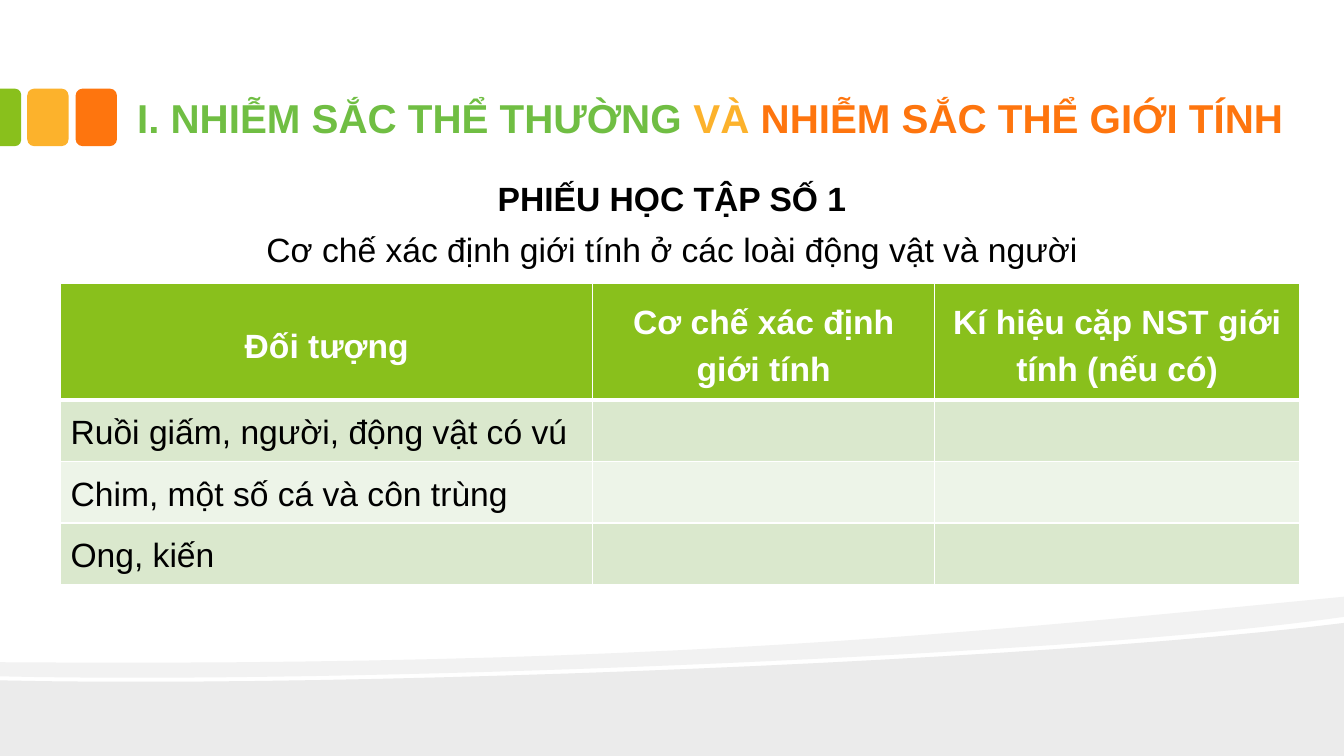
from dataclasses import dataclass

from lxml.etree import SubElement
from pptx import Presentation
from pptx.dml.color import RGBColor
from pptx.enum.shapes import MSO_SHAPE as Preset
from pptx.enum.text import MSO_ANCHOR as Anchor, PP_ALIGN as Align
from pptx.oxml.ns import qn
from pptx.util import Inches, Pt

WHITE = RGBColor(0xFF, 0xFF, 0xFF)
BLACK = RGBColor(0, 0, 0)
GREEN = RGBColor(0x89, 0xC0, 0x1C)
TITLE_GREEN = RGBColor(0x70, 0xBE, 0x43)
YELLOW = RGBColor(0xFC, 0xB2, 0x2C)
ORANGE = RGBColor(0xFE, 0x75, 0x0E)
BAND_DARK = RGBColor(0xDA, 0xE8, 0xCD)
BAND_LIGHT = RGBColor(0xED, 0xF4, 0xE8)
WAVE_GREY = RGBColor(0xEB, 0xEB, 0xEB)
WAVE_PALE = RGBColor(0xF2, 0xF2, 0xF2)
FONT = "Arial"
CURVE_STEPS = 24

Point = tuple[float, float]


@dataclass
class Wave:
    """Outline in inches: a lone point is a corner, four points are a Bezier curve."""
    color: RGBColor
    outline: list[list[Point]]


@dataclass
class Tab:
    preset: Preset
    left: float
    top: float
    width: float
    height: float
    color: RGBColor
    rotation: int = 0


WAVES = [
    Wave(WAVE_GREY, [[(13.33, 6.18)], [(13.33, 7.5)], [(0, 7.5)],
                     [(0, 6.75), (3.52, 6.83), (10.42, 6.55), (13.33, 6.18)]]),
    Wave(WAVE_PALE, [[(13.33, 5.92)],
                     [(13.33, 6.12), (12.55, 6.23), (11.49, 6.33), (10.29, 6.41)],
                     [(10.29, 6.41), (6.98, 6.63), (2.58, 6.77), (0, 6.71)],
                     [(0, 6.57), (6.52, 6.62), (9.71, 6.27), (13.33, 5.92)]]),
]
TABS = [
    Tab(Preset.ROUNDED_RECTANGLE, 0.75, 0.88, 0.41, 0.57, ORANGE),
    Tab(Preset.ROUNDED_RECTANGLE, 0.27, 0.88, 0.41, 0.57, YELLOW),
    Tab(Preset.ROUND_2_SAME_RECTANGLE, -0.18, 1.06, 0.57, 0.21, GREEN, 90),
]
TITLE = [("I. NHIỄM SẮC THỂ THƯỜNG ", TITLE_GREEN), ("VÀ ", YELLOW),
         ("NHIỄM SẮC THỂ GIỚI TÍNH", ORANGE)]
SUBTITLE = [("PHIẾU HỌC TẬP SỐ 1", True),
            ("Cơ chế xác định giới tính ở các loài động vật và người", False)]
COLUMN_WIDTHS = [5.28, 3.39, 3.62]
ROW_HEIGHTS = [1.16, 0.61, 0.61, 0.61]
ROWS = [
    ["Đối tượng", "Cơ chế xác định giới tính", "Kí hiệu cặp NST giới tính (nếu có)"],
    ["Ruồi giấm, người, động vật có vú", "", ""],
    ["Chim, một số cá và côn trùng", "", ""],
    ["Ong, kiến", "", ""],
]


def paint(shape, color: RGBColor) -> None:
    shape.shadow.inherit = False
    shape.fill.solid()
    shape.fill.fore_color.rgb = color
    shape.line.fill.background()


def trace(piece: list[Point]) -> list[Point]:
    if len(piece) == 1:
        return piece
    points = []
    for step in range(CURVE_STEPS + 1):
        t = step / CURVE_STEPS
        weights = ((1 - t) ** 3, 3 * t * (1 - t) ** 2, 3 * t * t * (1 - t), t ** 3)
        points.append((sum(w * x for w, (x, _) in zip(weights, piece)),
                       sum(w * y for w, (_, y) in zip(weights, piece))))
    return points


def draw_wave(slide, wave: Wave) -> None:
    points = [(Inches(x), Inches(y)) for piece in wave.outline for x, y in trace(piece)]
    builder = slide.shapes.build_freeform(*points[0])
    builder.add_line_segments(points[1:], close=True)
    paint(builder.convert_to_shape(), wave.color)


def draw_tab(slide, tab: Tab) -> None:
    shape = slide.shapes.add_shape(tab.preset, Inches(tab.left), Inches(tab.top),
                                   Inches(tab.width), Inches(tab.height))
    shape.rotation = tab.rotation
    if tab.rotation:
        shape.adjustments[0] = 0.292
    paint(shape, tab.color)


def style(paragraph, size: float, bold: bool, spacing: float, align: Align) -> None:
    paragraph.font.name = FONT
    paragraph.font.size = Pt(size)
    paragraph.font.bold = bold
    paragraph.line_spacing = spacing
    paragraph.alignment = align


def add_text_frame(slide, left: float, top: float, width: float, height: float):
    box = slide.shapes.add_textbox(Inches(left), Inches(top), Inches(width), Inches(height))
    box.text_frame.word_wrap = True
    return box.text_frame


def draw_title(slide) -> None:
    frame = add_text_frame(slide, 1.23, 0.68, 12.19, 0.79)
    frame.vertical_anchor = Anchor.BOTTOM
    frame.margin_left = frame.margin_right = Inches(0.13)
    frame.margin_top = frame.margin_bottom = Inches(0.07)
    paragraph = frame.paragraphs[0]
    style(paragraph, 28.8, True, 1.2, Align.LEFT)
    for text, color in TITLE:
        run = paragraph.add_run()
        run.text = text
        run.font.color.rgb = color


def draw_subtitle(slide) -> None:
    frame = add_text_frame(slide, 2.09, 1.62, 9.15, 1.06)
    for index, (text, bold) in enumerate(SUBTITLE):
        paragraph = frame.add_paragraph() if index else frame.paragraphs[0]
        paragraph.text = text
        style(paragraph, 24, bold, 1.25, Align.CENTER)
        paragraph.font.color.rgb = BLACK


def set_borders(cell, widths: dict[str, float]) -> None:
    properties = cell._tc.get_or_add_tcPr()
    for position, (side, width) in enumerate(widths.items()):
        line = SubElement(properties, qn(f"a:{side}"), w=str(Pt(width)))
        color = SubElement(SubElement(line, qn("a:solidFill")), qn("a:srgbClr"))
        color.set("val", str(WHITE))
        properties.insert(position, line)  # borders precede the fill


def draw_table(slide) -> None:
    table = slide.shapes.add_table(
        len(ROWS), len(COLUMN_WIDTHS), Inches(0.6), Inches(2.81),
        Inches(sum(COLUMN_WIDTHS)), Inches(sum(ROW_HEIGHTS))).table
    for column, width in zip(table.columns, COLUMN_WIDTHS):
        column.width = Inches(width)
    for index, (row, height, texts) in enumerate(zip(table.rows, ROW_HEIGHTS, ROWS)):
        row.height = Inches(height)
        header = index == 0
        band = GREEN if header else BAND_DARK if index % 2 else BAND_LIGHT
        for cell, text in zip(row.cells, texts):
            cell.fill.solid()
            cell.fill.fore_color.rgb = band
            set_borders(cell, {"lnL": 1, "lnR": 1, "lnT": 3 if index == 1 else 1,
                               "lnB": 3 if header else 1})
            if text:
                cell.text = text
                cell.vertical_anchor = Anchor.MIDDLE if header else Anchor.TOP
                paragraph = cell.text_frame.paragraphs[0]
                style(paragraph, 24, header, 1.25, Align.CENTER if header else Align.LEFT)
                paragraph.font.color.rgb = WHITE if header else BLACK


def main() -> None:
    presentation = Presentation()
    presentation.slide_width = Inches(13.33)
    presentation.slide_height = Inches(7.5)
    slide = presentation.slides.add_slide(presentation.slide_layouts[6])

    # Background waves and coloured tabs
    for wave in WAVES:
        draw_wave(slide, wave)
    for tab in TABS:
        draw_tab(slide, tab)

    # Headings and worksheet table
    draw_title(slide)
    draw_subtitle(slide)
    draw_table(slide)
    presentation.save("out.pptx")


if __name__ == "__main__":
    main()
